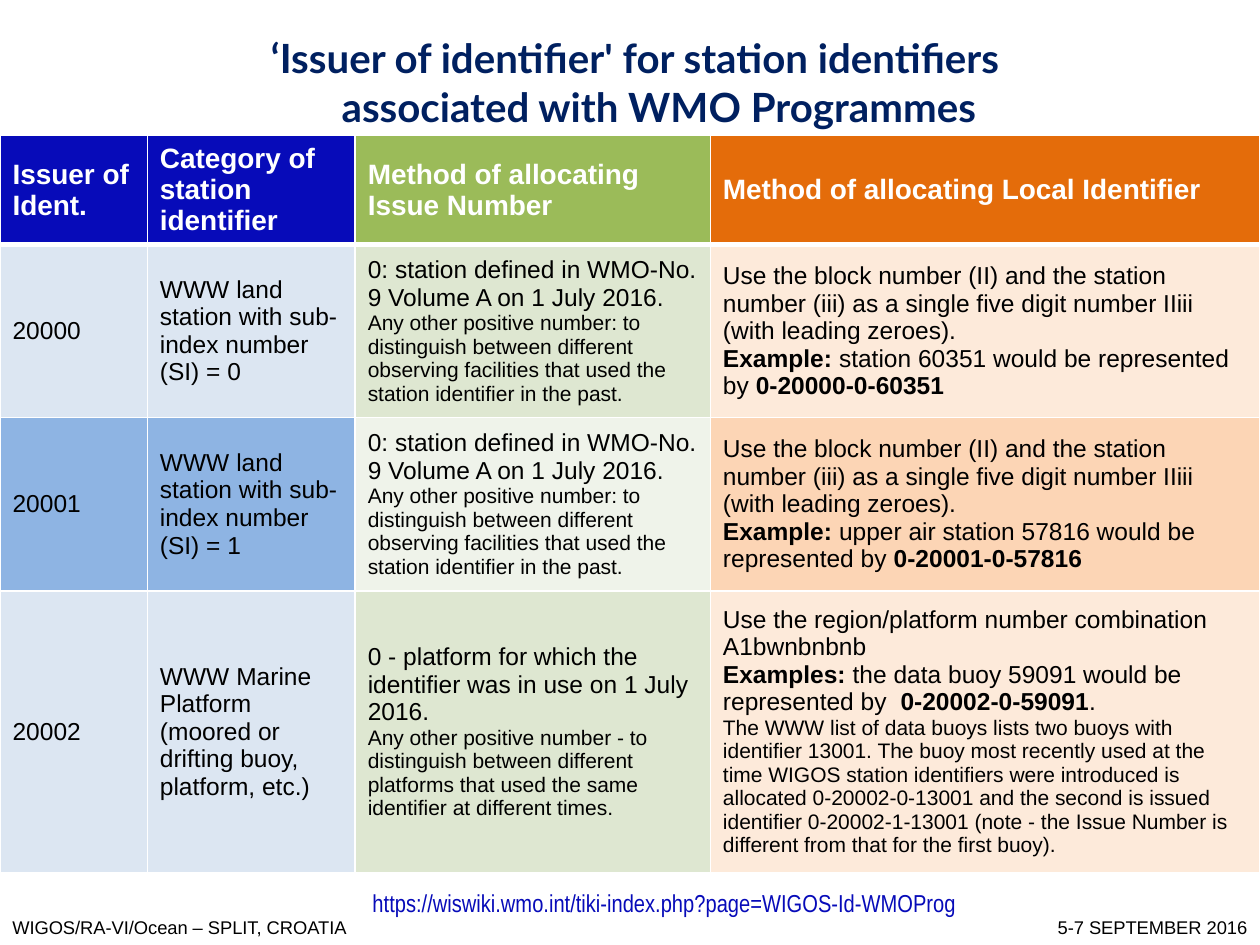
from copy import deepcopy

from lxml import etree
from pptx import Presentation
from pptx.dml.color import RGBColor
from pptx.enum.text import MSO_ANCHOR, MSO_AUTO_SIZE, PP_ALIGN
from pptx.oxml.ns import qn
from pptx.util import Cm, Pt

MIDDLE = MSO_ANCHOR.MIDDLE
TOP = MSO_ANCHOR.TOP
LEFT, CENTER, RIGHT = PP_ALIGN.LEFT, PP_ALIGN.CENTER, PP_ALIGN.RIGHT
NO_FIT = MSO_AUTO_SIZE.NONE
TITLE_ONLY = 5

COLORS = {
    "title": "002060",
    "text": "000000",
    "white": "FFFFFF",
    "blue": "070BB9",
    "green": "9BBB59",
    "orange": "E46C0A",
    "pale_blue": "DCE6F2",
    "mid_blue": "8EB4E3",
    "pale_green": "DEE7D1",
    "faint_green": "EFF3EA",
    "pale_orange": "FDEADA",
    "mid_orange": "FCD5B5",
}

COLUMN_WIDTHS = [2.97, 4.19, 7.16, 11.08]
ROW_HEIGHTS = [2.2, 3.49, 3.49, 5.68]
ODD_FILLS = ["pale_blue", "pale_blue", "pale_green", "pale_orange"]
EVEN_FILLS = ["mid_blue", "mid_blue", "faint_green", "mid_orange"]
ROW_FILLS = [["blue", "blue", "green", "orange"], ODD_FILLS, EVEN_FILLS, ODD_FILLS]

BODY = {"size": Pt(14), "bold": False}
STRONG = {"size": Pt(14), "bold": True}
SMALL = {"size": Pt(12), "bold": False}
HEADER = {"size": Pt(16), "bold": True}

LAND_ISSUE = [
    ("0: station defined in WMO-No. 9 Volume A on 1 July 2016.\n", BODY),
    ("Any other positive number: to distinguish between different observing "
     "facilities that used the station identifier in the past.", SMALL),
]
MARINE_ISSUE = [
    ("0 - platform for which the identifier was in use on 1 July 2016.\n", BODY),
    ("Any other positive number - to distinguish between different platforms "
     "that used the same identifier at different times.", SMALL),
]
MARINE_LOCAL = [
    ("Use the region/platform number combination A1bwnbnbnb\n", BODY),
    ("Examples: ", STRONG),
    ("the data buoy 59091 would be represented by  ", BODY),
    ("0-20002-0-59091", STRONG),
    (".\n", BODY),
    ("The WWW list of data buoys lists two buoys with identifier 13001. The buoy "
     "most recently used at the time WIGOS station identifiers were introduced is "
     "allocated 0-20002-0-13001 and the second is issued identifier "
     "0-20002-1-13001 (note - the Issue Number is different from that for the "
     "first buoy).", SMALL),
]


def land_local(example, identifier):
    return [
        ("Use the block number (II) and the station number (iii) as a single five "
         "digit number IIiii (with leading zeroes).\n", BODY),
        ("Example: ", STRONG),
        (f"{example} would be represented by ", BODY),
        (identifier, STRONG),
    ]


def land_category(index):
    return [(f"WWW land station with sub-index number (SI) = {index}", BODY)]


HEADINGS = [
    "Issuer of Ident.",
    "Category of station identifier",
    "Method of allocating Issue Number",
    "Method of allocating Local Identifier",
]
ROWS = [
    [[(heading, HEADER)] for heading in HEADINGS],
    [[("20000", BODY)], land_category(0), LAND_ISSUE,
     land_local("station 60351", "0-20000-0-60351")],
    [[("20001", BODY)], land_category(1), LAND_ISSUE,
     land_local("upper air station 57816", "0-20001-0-57816")],
    [[("20002", BODY)],
     [("WWW Marine Platform (moored or drifting buoy, platform, etc.)", BODY)],
     MARINE_ISSUE, MARINE_LOCAL],
]


def apply_format(target, values):
    for name, value in values.items():
        setattr(target, name, value)


def add_run(paragraph, text, color, font_format):
    run = paragraph.add_run()
    run.text = text.rstrip("\n")
    apply_format(run.font, font_format)
    run.font.color.rgb = RGBColor.from_string(COLORS[color])
    if text.endswith("\n"):
        paragraph.add_line_break()
        paragraph._p[-1].append(deepcopy(run._r.rPr))


def fill_text(shape, text, color, font_format, alignment=LEFT, anchor=TOP,
              wrap=True, hanging=False):
    frame = shape.text_frame
    apply_format(frame, {"word_wrap": wrap, "auto_size": NO_FIT,
                         "vertical_anchor": anchor})
    paragraph = frame.paragraphs[0]
    apply_format(paragraph, {"alignment": alignment, "space_before": Pt(0)})
    if hanging:
        properties = paragraph._p.get_or_add_pPr()
        properties.set("marL", str(Cm(0.95)))
        properties.set("indent", str(Cm(-0.95)))
    add_run(paragraph, text, color, font_format)


def place_title(slide, left, top, width, height):
    title = slide.shapes.title
    apply_format(title, {"left": Cm(left), "top": Cm(top),
                         "width": Cm(width), "height": Cm(height)})
    fill_text(title, "‘Issuer of identifier' for station identifiers "
              "associated with WMO Programmes", "title",
              {"name": "Lato", "size": Pt(23), "bold": True},
              CENTER, MIDDLE, hanging=True)


def set_borders(cell, top, bottom):
    properties = cell._tc.get_or_add_tcPr()
    for side, width in (("L", 1), ("R", 1), ("T", top), ("B", bottom)):
        line = etree.SubElement(properties, qn(f"a:ln{side}"), w=str(Pt(width)))
        solid = etree.SubElement(line, qn("a:solidFill"))
        etree.SubElement(solid, qn("a:srgbClr"), val=COLORS["white"])


def place_identifier_table(slide, left, top, width, height):
    table = slide.shapes.add_table(len(ROWS), len(HEADINGS), Cm(left), Cm(top),
                                   Cm(width), Cm(height)).table
    table.horz_banding = False
    for column, column_width in zip(table.columns, COLUMN_WIDTHS):
        column.width = Cm(column_width)
    for row, row_height in zip(table.rows, ROW_HEIGHTS):
        row.height = Cm(row_height)
    for row_index, (contents, fills) in enumerate(zip(ROWS, ROW_FILLS)):
        color = "white" if row_index == 0 else "text"
        for column_index, (parts, fill) in enumerate(zip(contents, fills)):
            cell = table.cell(row_index, column_index)
            set_borders(cell, 3 if row_index == 1 else 1, 3 if row_index == 0 else 1)
            cell.fill.solid()
            cell.fill.fore_color.rgb = RGBColor.from_string(COLORS[fill])
            cell.vertical_anchor = MIDDLE
            paragraph = cell.text_frame.paragraphs[0]
            for text, font_format in parts:
                add_run(paragraph, text, color, {"name": "Arial", **font_format})


def place_link(slide, left, top, width, height):
    box = slide.shapes.add_textbox(Cm(left), Cm(top), Cm(width), Cm(height))
    fill_text(box, "https://wiswiki.wmo.int/tiki-index.php?page=WIGOS-Id-WMOProg",
              "blue", {"name": "Arial Narrow", "size": Pt(14)})


def place_footer(slide, left, top, width, height):
    left_width, right_width = 9.02, 5.74
    footer_font = {"name": "Arial", "size": Pt(10.5)}
    for text, offset, box_width, alignment in (
        ("WIGOS/RA-VI/Ocean – SPLIT, CROATIA", 0, left_width, LEFT),
        ("5-7 SEPTEMBER 2016", width - right_width, right_width, RIGHT),
    ):
        box = slide.shapes.add_textbox(Cm(left + offset), Cm(top),
                                       Cm(box_width), Cm(height))
        fill_text(box, text, "text", footer_font, alignment, MIDDLE, hanging=True)


def main():
    presentation = Presentation()
    presentation.slide_width = Cm(25.4)
    presentation.slide_height = Cm(19.05)
    slide = presentation.slides.add_slide(presentation.slide_layouts[TITLE_ONLY])
    place_footer(slide, 0, 18.34, 25.4, 0.71)
    place_title(slide, 3.91, 0, 17.81, 3.3)
    place_identifier_table(slide, 0, 2.73, sum(COLUMN_WIDTHS), sum(ROW_HEIGHTS))
    place_link(slide, 7.26, 17.78, 12.95, 0.86)
    presentation.save("out.pptx")


if __name__ == "__main__":
    main()
